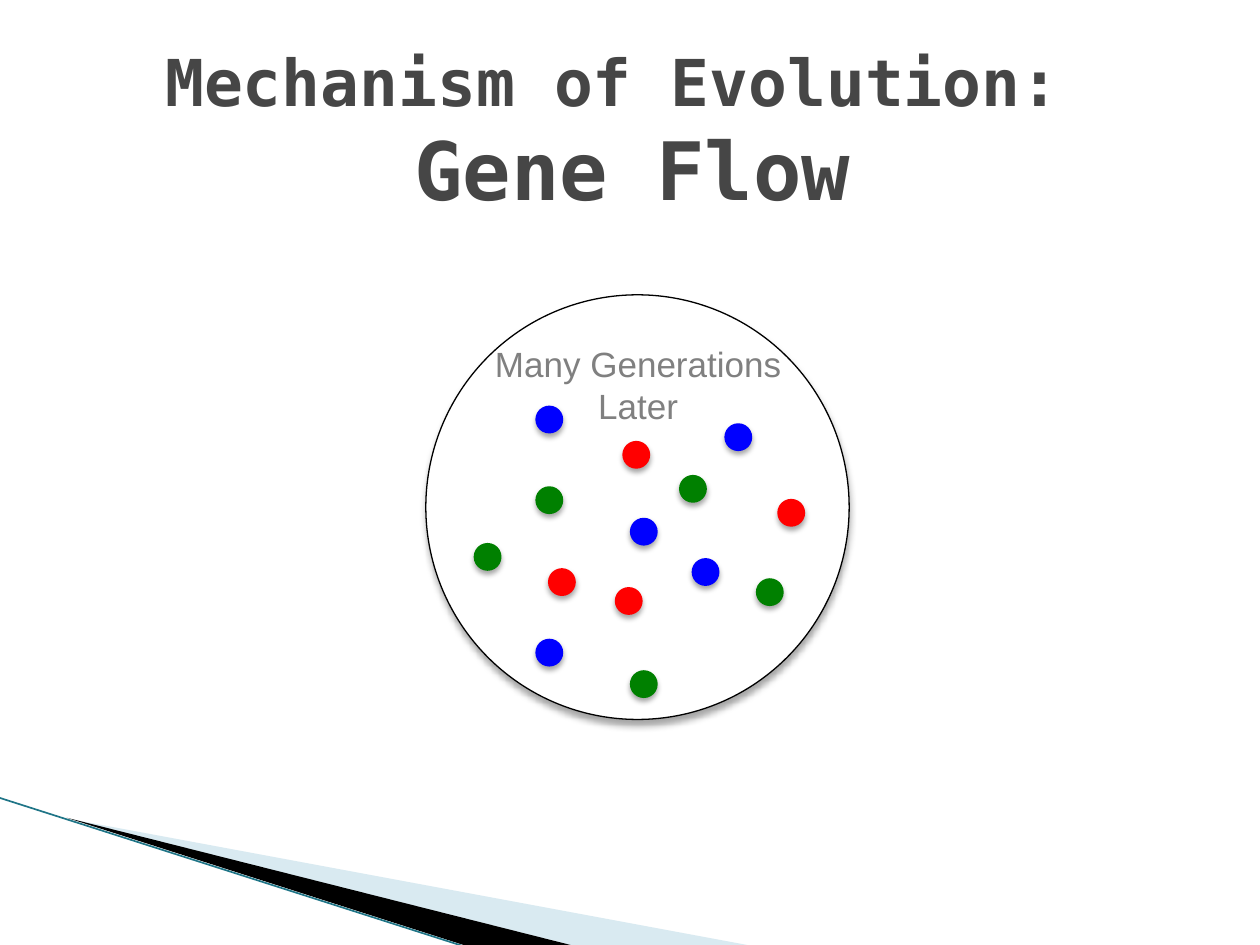
from lxml import etree
from pptx import Presentation
from pptx.dml.color import RGBColor
from pptx.enum.shapes import MSO_CONNECTOR as CONNECTOR, MSO_SHAPE as SHAPE
from pptx.enum.text import MSO_ANCHOR as ANCHOR, MSO_AUTO_SIZE as AUTO_SIZE, PP_ALIGN as ALIGN
from pptx.oxml import parse_xml
from pptx.oxml.ns import nsdecls, qn
from pptx.util import Pt

PX = 9144  # 100 px to the inch
WHITE = RGBColor(0xFF, 0xFF, 0xFF)
BLACK = RGBColor(0x00, 0x00, 0x00)
RED = RGBColor(0xFF, 0x00, 0x00)
GREEN = RGBColor(0x00, 0x80, 0x00)
BLUE = RGBColor(0x00, 0x00, 0xFF)
PALE_BLUE = RGBColor(0xA0, 0xCB, 0xDC)
TEAL = RGBColor(0x1F, 0x75, 0x87)
DARK_GREY = RGBColor(0x46, 0x46, 0x46)
GREY = RGBColor(0x80, 0x80, 0x80)


def add_circle(left, top, width, height, fill, line, weight, blur, distance):
    circle = page.shapes.add_shape(SHAPE.OVAL, left * PX, top * PX, width * PX, height * PX)
    circle.fill.solid()
    circle.fill.fore_color.rgb = fill
    circle.line.color.rgb = line
    circle.line.width = Pt(weight)
    circle._element.spPr.append(parse_xml(
        f'<a:effectLst {nsdecls("a")}>'
        f'<a:outerShdw blurRad="{Pt(blur)}" dist="{Pt(distance)}" dir="5400000" rotWithShape="0">'
        '<a:srgbClr val="000000"><a:alpha val="35000"/></a:srgbClr>'
        '</a:outerShdw></a:effectLst>'))


def add_span(para, text, **formats):
    span = para.add_run()
    span.text = text
    color = formats.pop("color")
    for name, value in formats.items():
        setattr(span.font, name, value)
    span.font.color.rgb = color


deck = Presentation()
deck.slide_width, deck.slide_height = 1000 * PX, 750 * PX
page = deck.slides.add_slide(deck.slide_layouts[5])

# Corner wedges
wedges = [
    ([(55, 650), (593, 750), (453, 750)], PALE_BLUE, 40),
    ([(53, 649), (453, 750), (368, 750)], BLACK, 100),
]
for (start, *corners), color, opacity in wedges:
    builder = page.shapes.build_freeform(*start, scale=PX)
    builder.add_line_segments(corners, close=True)
    wedge = builder.convert_to_shape()
    wedge.shadow.inherit = False
    wedge.fill.solid()
    wedge.fill.fore_color.rgb = color
    wedge.line.fill.background()
    if opacity < 100:
        tint = wedge._element.spPr.find(qn("a:solidFill"))[0]
        etree.SubElement(tint, qn("a:alpha"), val=str(opacity * 1000))

edge = page.shapes.add_connector(CONNECTOR.STRAIGHT, -1 * PX, 633 * PX, 371 * PX, 752 * PX)
edge.line.color.rgb = TEAL
edge.line.width = Pt(0.95)
etree.SubElement(edge._element.spPr, qn("a:effectLst"))

# Title
title = page.shapes.title
title_place = {"left": 96, "top": 40, "width": 812, "height": 125}
for name, value in title_place.items():
    setattr(title, name, value * PX)
frame = title.text_frame
frame.auto_size = AUTO_SIZE.NONE
frame.vertical_anchor = ANCHOR.MIDDLE
para = frame.paragraphs[0]
para.alignment = ALIGN.CENTER
title_format = {"name": "DejaVu Sans Mono", "bold": True, "color": DARK_GREY}
add_span(para, "Mechanism of Evolution: ", size=Pt(36.9), **title_format)
para.add_line_break()
add_span(para, "Gene Flow", size=Pt(46), **title_format)

# Population
add_circle(338, 234, 336, 337, WHITE, BLACK, 0.75, 4, 3)

# Alleles in the population
alleles = {
    RED: [(495, 351), (489, 467), (618, 397), (436, 452)],
    BLUE: [(501, 412), (426, 323), (576, 337), (550, 444), (426, 508)],
    GREEN: [(426, 387), (601, 460), (501, 533), (377, 432), (540, 378)],
}
for color, places in alleles.items():
    for left, top in places:
        add_circle(left, top, 20, 20, color, color, 1.5, 3, 2)

# Caption
caption = page.shapes.add_textbox(373 * PX, 262 * PX, 267 * PX, 50 * PX)
frame = caption.text_frame
frame.word_wrap = True
for side in ("left", "top", "right", "bottom"):
    setattr(frame, f"margin_{side}", 10 * PX)
para = frame.paragraphs[0]
para.alignment = ALIGN.CENTER
add_span(para, "Many Generations Later", name="Arial", size=Pt(20), color=GREY)

deck.save("out.pptx")
